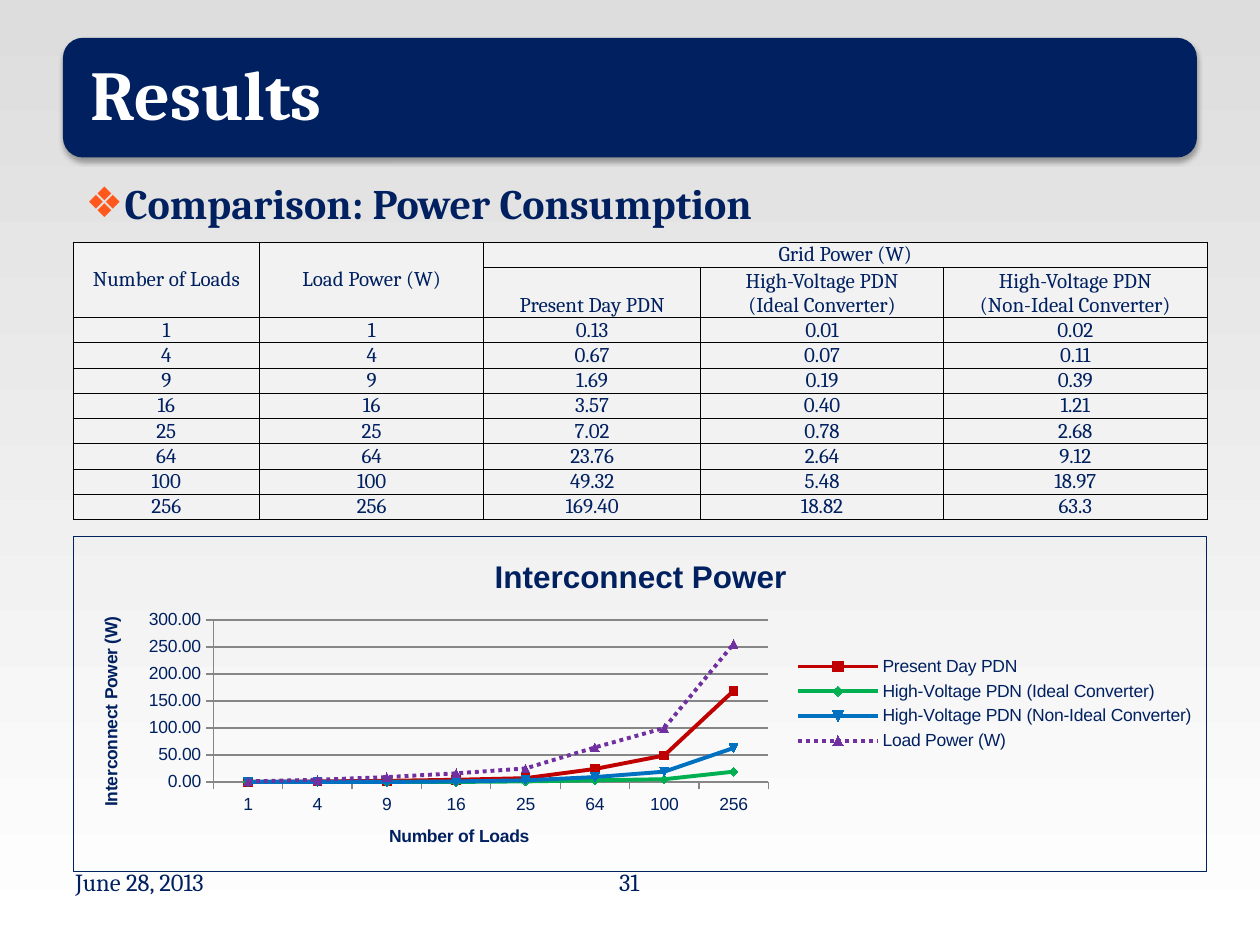
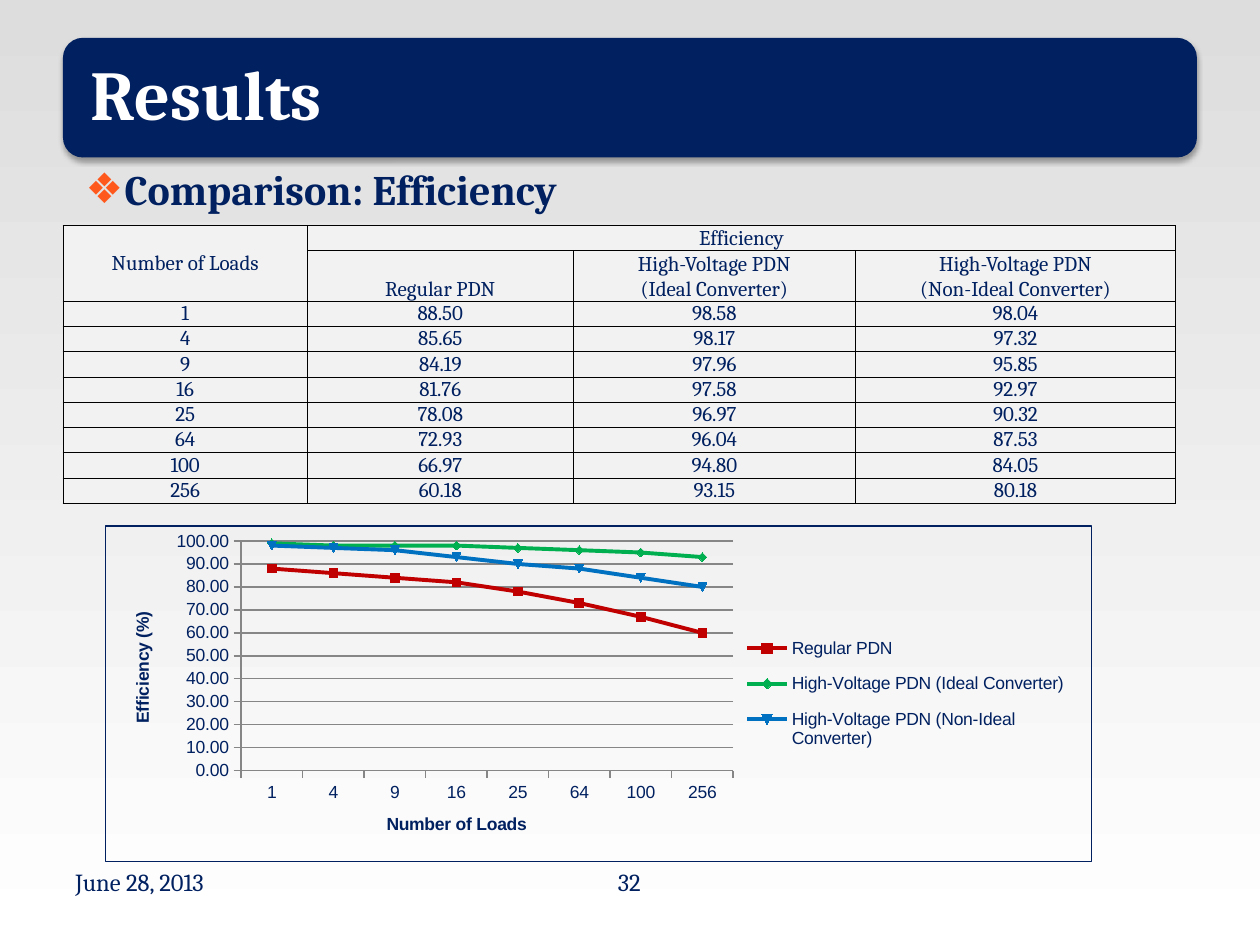
from dataclasses import dataclass

from pptx import Presentation
from pptx.chart.data import CategoryChartData
from pptx.dml.color import RGBColor
from pptx.enum.chart import XL_CHART_TYPE, XL_LEGEND_POSITION, XL_MARKER_STYLE, XL_TICK_MARK
from pptx.enum.dml import MSO_LINE
from pptx.enum.shapes import MSO_SHAPE
from pptx.enum.text import MSO_ANCHOR, MSO_AUTO_SIZE, PP_ALIGN
from pptx.oxml import parse_xml
from pptx.oxml.ns import nsdecls, qn
from pptx.util import Inches, Pt


@dataclass(frozen=True)
class Theme:
    navy: str = "002060"
    white: str = "FFFFFF"
    backdrop: str = "DDDDDD"
    cell: str = "F2F2F2"
    rule: str = "000000"
    bullet: str = "FF581D"
    grid: str = "868686"
    present: str = "C00000"
    ideal: str = "00B050"
    non_ideal: str = "0070C0"
    load: str = "7030A0"
    text_font: str = "Cambria"
    chart_font: str = "Arial"
    title: int = 40
    heading: int = 24
    chart_title: int = 18
    footer: int = 14
    table: int = 12
    chart: int = 10


theme = Theme()


def write(frame, text, size, color=theme.navy, font=theme.text_font, bold=False,
          align=PP_ALIGN.LEFT, line_spacing=None, bullet=None):
    for index, line in enumerate(text.split("\n")):
        paragraph = frame.add_paragraph() if index else frame.paragraphs[0]
        if bullet:
            properties = paragraph._p.get_or_add_pPr()
            properties.set("marL", str(Inches(0.31)))
            properties.set("indent", str(Inches(-0.31)))
            properties.append(parse_xml(
                f'<a:buClr {nsdecls("a")}><a:srgbClr val="{theme.bullet}"/></a:buClr>'))
            properties.append(parse_xml(f'<a:buChar {nsdecls("a")} char="{bullet}"/>'))
        paragraph.alignment = align
        paragraph.space_before = Pt(0)
        paragraph.line_spacing = line_spacing
        run = paragraph.add_run()
        run.text = line
        run.font.size = Pt(size)
        run.font.name = font
        run.font.bold = bold
        run.font.color.rgb = RGBColor.from_string(color)


def place(element, index, box, chart_box):
    for old in element.findall(qn("c:layout")):
        element.remove(old)
    target = '<c:layoutTarget val="inner"/>' if element.tag == qn("c:plotArea") else ""
    modes = '<c:xMode val="edge"/><c:yMode val="edge"/>'
    chart_size = chart_box[2:] * 2
    values = "".join(f'<c:{key} val="{length / whole:.4f}"/>'
                     for key, length, whole in zip("xywh", box, chart_size))
    element.insert(index, parse_xml(
        f'<c:layout {nsdecls("c")}><c:manualLayout>{target}{modes}{values}'
        '</c:manualLayout></c:layout>'))


loads = "1 4 9 16 25 64 100 256".split()
ideal_name = "High-Voltage PDN\n(Ideal Converter)"
non_ideal_name = "High-Voltage PDN\n(Non-Ideal Converter)"
line_colors = {"Present Day PDN": theme.present, "Regular PDN": theme.present,
               ideal_name: theme.ideal, non_ideal_name: theme.non_ideal,
               "Load Power (W)": theme.load}

results = [
    dict(
        number="31", heading="Comparison: Power Consumption", heading_top=1.36,
        group="Grid Power (W)", group_start=2, table_at=(0.58, 1.92),
        widths=[1.48, 1.78, 1.72, 1.93, 2.09],
        columns={
            "Number of Loads": loads,
            "Load Power (W)": loads,
            "Present Day PDN": "0.13 0.67 1.69 3.57 7.02 23.76 49.32 169.40".split(),
            ideal_name: "0.01 0.07 0.19 0.40 0.78 2.64 5.48 18.82".split(),
            non_ideal_name: "0.02 0.11 0.39 1.21 2.68 9.12 18.97 63.3".split(),
        },
        series=["Present Day PDN", ideal_name, non_ideal_name, "Load Power (W)"],
        chart_at=(0.58, 4.25, 9, 2.67), chart_title="Interconnect Power",
        value_title="Interconnect Power (W)", top_value=300, step=50,
        plot_at=(1.11, 0.67, 4.41, 1.29), legend_at=(5.7, 0.92, 3.24, 0.83),
        category_title_at=(2.48, 2.27), value_title_at=(0.18, 0.62)),
    dict(
        number="32", heading="Comparison: Efficiency", heading_top=1.25,
        group="Efficiency", group_start=1, table_at=(0.5, 1.79),
        widths=[1.94, 2.11, 2.24, 2.54],
        columns={
            "Number of Loads": loads,
            "Regular PDN": "88.50 85.65 84.19 81.76 78.08 72.93 66.97 60.18".split(),
            ideal_name: "98.58 98.17 97.96 97.58 96.97 96.04 94.80 93.15".split(),
            non_ideal_name: "98.04 97.32 95.85 92.97 90.32 87.53 84.05 80.18".split(),
        },
        series=["Regular PDN", ideal_name, non_ideal_name],
        chart_at=(0.83, 4.17, 7.84, 2.67), chart_title=None,
        value_title="Efficiency (%)", top_value=100, step=10,
        plot_at=(1.08, 0.12, 3.91, 1.83), legend_at=(5.03, 0.77, 2.66, 1.13),
        category_title_at=(2.21, 2.26), value_title_at=(0.18, 0.66)),
]

prs = Presentation()
prs.slide_width, prs.slide_height = Inches(10), Inches(7.5)
backdrop = prs.slide_master.background.fill
backdrop.gradient()
backdrop.gradient_angle = 270
for stop, position, shade in zip(backdrop.gradient_stops, (0, 1),
                                 (theme.backdrop, theme.white)):
    stop.position = position
    stop.color.rgb = RGBColor.from_string(shade)

for result in results:
    slide = prs.slides.add_slide(prs.slide_layouts[1])
    shapes = slide.shapes

    band = shapes.add_shape(MSO_SHAPE.ROUNDED_RECTANGLE,
                            Inches(0.5), Inches(0.3), Inches(9), Inches(0.95))
    band.fill.solid()
    band.fill.fore_color.rgb = RGBColor.from_string(theme.navy)
    band.line.fill.background()
    band.shadow.inherit = False
    band._element.spPr.find(qn("a:effectLst")).append(parse_xml(
        f'<a:outerShdw {nsdecls("a")} blurRad="{Pt(3.1)}" dist="{Pt(1.8)}" dir="5400000" '
        'rotWithShape="0"><a:srgbClr val="000000"><a:alpha val="35000"/></a:srgbClr>'
        '</a:outerShdw>'))
    shapes._spTree.insert(2, band._element)

    title = shapes.title
    title.left, title.top = Inches(0.55), Inches(0.35)
    title.width, title.height = Inches(8.91), Inches(0.86)
    title_frame = title.text_frame
    title_frame.auto_size = MSO_AUTO_SIZE.NONE
    title_frame.vertical_anchor = MSO_ANCHOR.MIDDLE
    title_frame.margin_left = title_frame.margin_right = Inches(0.17)
    title_frame.margin_top = title_frame.margin_bottom = Inches(0.17)
    write(title_frame, "Results", theme.title, color=theme.white, bold=True, line_spacing=0.9)

    heading = slide.placeholders[1]
    heading.left, heading.top = Inches(0.58), Inches(result["heading_top"])
    heading.width, heading.height = Inches(5.75), Inches(0.5)
    heading.text_frame.auto_size = MSO_AUTO_SIZE.NONE
    write(heading.text_frame, result["heading"], theme.heading, bold=True, bullet="❖")

    for left, footer, align in ((0.5, "June 28, 2013", PP_ALIGN.LEFT),
                                (3.83, result["number"], PP_ALIGN.CENTER)):
        footer_box = shapes.add_textbox(Inches(left), Inches(6.83), Inches(2.33), Inches(0.52))
        footer_box.text_frame.word_wrap = True
        write(footer_box.text_frame, footer, theme.footer, align=align)

    columns, group_start = result["columns"], result["group_start"]
    left, top = result["table_at"]
    heights = [0.2, 0.39] + [0.2] * len(loads)
    table = shapes.add_table(len(heights), len(columns), Inches(left), Inches(top),
                             Inches(sum(result["widths"])), Inches(sum(heights))).table
    table.first_row = table.horz_banding = False
    for row, height in zip(table.rows, heights):
        row.height = Inches(height)
    for column, width in zip(table.columns, result["widths"]):
        column.width = Inches(width)
    table.cell(0, group_start).merge(table.cell(0, len(columns) - 1))
    for index in range(group_start):
        table.cell(0, index).merge(table.cell(1, index))

    for column_index, (name, values) in enumerate(columns.items()):
        heads = [name, ""] if column_index < group_start else [result["group"], name]
        for row_index, entry in enumerate(heads + values):
            cell = table.cell(row_index, column_index)
            cell.margin_left = cell.margin_right = Inches(0.01)
            cell.margin_top = cell.margin_bottom = 0
            cell.vertical_anchor = MSO_ANCHOR.BOTTOM if row_index == 1 else MSO_ANCHOR.MIDDLE
            cell.fill.solid()
            cell.fill.fore_color.rgb = RGBColor.from_string(theme.cell)
            for position, edge in enumerate(("lnL", "lnR", "lnT", "lnB")):
                cell._tc.get_or_add_tcPr().insert(position, parse_xml(
                    f'<a:{edge} {nsdecls("a")} w="{Pt(0.5)}"><a:solidFill>'
                    f'<a:srgbClr val="{theme.rule}"/></a:solidFill></a:{edge}>'))
            if not cell.is_spanned:
                write(cell.text_frame, entry, theme.table, align=PP_ALIGN.CENTER)

    chart_data = CategoryChartData(number_format="0.00")
    chart_data.categories = loads
    for name in result["series"]:
        chart_data.add_series(name.replace("\n", " "),
                              [round(float(value)) for value in columns[name]])
    chart_box = result["chart_at"]
    chart = shapes.add_chart(XL_CHART_TYPE.LINE_MARKERS,
                             *map(Inches, chart_box), chart_data).chart
    chart.font.size = Pt(theme.chart)
    chart.font.name = theme.chart_font
    chart.font.color.rgb = RGBColor.from_string(theme.navy)
    chart_space = chart._chartSpace
    chart_space.find(qn("c:chart")).addnext(parse_xml(
        f'<c:spPr {nsdecls("c", "a")}><a:noFill/><a:ln w="{Pt(0.75)}"><a:solidFill>'
        f'<a:srgbClr val="{theme.navy}"/></a:solidFill></a:ln></c:spPr>'))
    place(chart_space.find(qn("c:chart")).find(qn("c:plotArea")), 0,
          result["plot_at"], chart_box)

    chart.has_title = bool(result["chart_title"])
    if chart.has_title:
        write(chart.chart_title.text_frame, result["chart_title"], theme.chart_title,
              font=theme.chart_font, bold=True, align=PP_ALIGN.CENTER)
        place(chart.chart_title._element, 1, (3.3, 0.11), chart_box)

    chart.has_legend = True
    chart.legend.position = XL_LEGEND_POSITION.RIGHT
    chart.legend.include_in_layout = False
    place(chart.legend._element, 1, result["legend_at"], chart_box)

    for axis, axis_name, corner in (
            (chart.category_axis, "Number of Loads", result["category_title_at"]),
            (chart.value_axis, result["value_title"], result["value_title_at"])):
        write(axis.axis_title.text_frame, axis_name, theme.chart,
              font=theme.chart_font, bold=True, align=PP_ALIGN.CENTER)
        place(axis.axis_title._element, 1, corner, chart_box)
        axis.major_tick_mark = XL_TICK_MARK.OUTSIDE
        axis.format.line.width = Pt(0.75)
        axis.format.line.color.rgb = RGBColor.from_string(theme.grid)

    value_axis = chart.value_axis
    value_axis.axis_title.text_frame._txBody.bodyPr.set("rot", "-5400000")
    value_axis.minimum_scale, value_axis.maximum_scale = 0, result["top_value"]
    value_axis.major_unit = result["step"]
    value_axis.tick_labels.number_format = "0.00"
    value_axis.tick_labels.number_format_is_linked = False
    value_axis.has_major_gridlines = True
    value_axis.major_gridlines.format.line.width = Pt(0.75)
    value_axis.major_gridlines.format.line.color.rgb = RGBColor.from_string(theme.grid)

    chart.plots[0].vary_by_categories = False
    for name, series in zip(result["series"], chart.plots[0].series):
        color = RGBColor.from_string(line_colors[name])
        series.smooth = False
        series.format.line.width = Pt(2.25)
        series.format.line.color.rgb = color
        if name == "Load Power (W)":
            series.format.line.dash_style = MSO_LINE.ROUND_DOT
        series.marker.style = XL_MARKER_STYLE.AUTOMATIC
        series.marker.size = 5
        series.marker.format.fill.solid()
        series.marker.format.fill.fore_color.rgb = color
        series.marker.format.line.color.rgb = color

prs.save("out.pptx")
